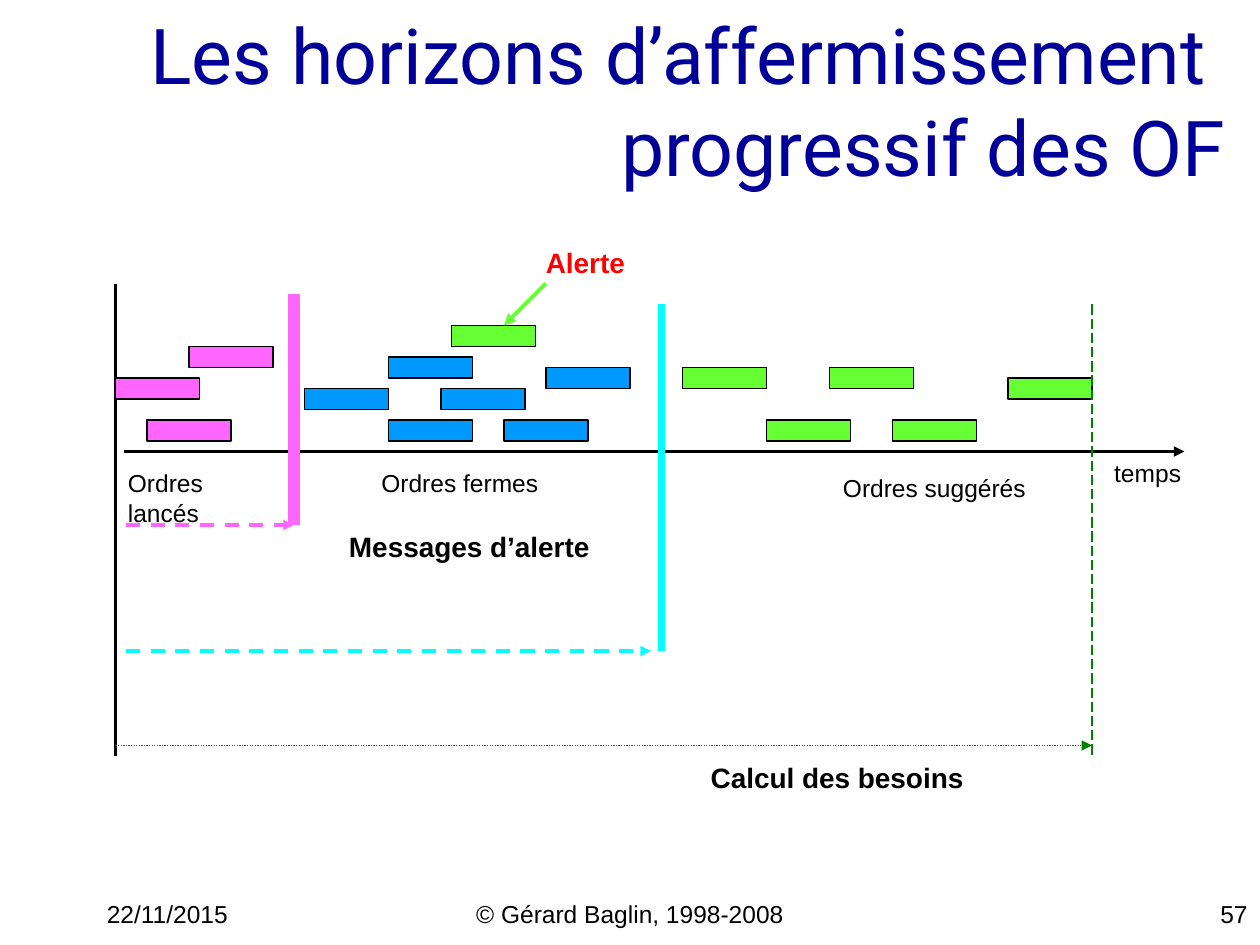
from lxml.etree import SubElement
from pptx import Presentation
from pptx.dml.color import RGBColor
from pptx.enum.dml import MSO_LINE
from pptx.enum.shapes import MSO_CONNECTOR, MSO_SHAPE
from pptx.enum.text import MSO_ANCHOR, MSO_AUTO_SIZE, PP_ALIGN
from pptx.oxml.ns import qn
from pptx.util import Inches, Pt

BLACK, NAVY, RED = "000000", "000099", "FF0000"
PINK, BLUE, CYAN = "FF66FF", "0099FF", "00FFFF"
LIME, GREEN = "66FF33", "008000"
LEFT, CENTER, RIGHT = PP_ALIGN.LEFT, PP_ALIGN.CENTER, PP_ALIGN.RIGHT


def color(value):
    return RGBColor.from_string(value)


def grid(*cells):
    return [Inches(cell / 12) for cell in cells]


class HorizonSlide:
    body_font = "Arial"
    title_font = "Roboto"
    order_size = (8, 2)

    def __init__(self, presentation):
        self.slide = presentation.slides.add_slide(presentation.slide_layouts[5])

    def style(self, paragraph, name, size, value, align, bold=False):
        paragraph.alignment = align
        font = paragraph.font
        font.name, font.size, font.bold = name, Pt(size), bold
        font.color.rgb = color(value)

    def title(self, text, box):
        shape = self.slide.shapes.title
        shape.left, shape.top, shape.width, shape.height = grid(*box)
        frame = shape.text_frame
        frame.text = text
        frame.auto_size = MSO_AUTO_SIZE.NONE
        frame.vertical_anchor = MSO_ANCHOR.MIDDLE
        self.style(frame.paragraphs[0], self.title_font, 44, NAVY, RIGHT)

    def label(self, text, box, align=LEFT, size=14, value=BLACK, bold=False, wrap=True):
        frame = self.slide.shapes.add_textbox(*grid(*box)).text_frame
        frame.word_wrap = wrap
        frame.text = text
        self.style(frame.paragraphs[0], self.body_font, size, value, align, bold)

    def order(self, column, row, fill):
        shape = self.slide.shapes.add_shape(
            MSO_SHAPE.RECTANGLE, *grid(column, row, *self.order_size))
        shape.shadow.inherit = False
        shape.fill.solid()
        shape.fill.fore_color.rgb = color(fill)
        shape.line.color.rgb = color(BLACK)
        shape.line.width = Pt(0.75)

    def line(self, start, end, value, width, dash=None, arrow=False):
        connector = self.slide.shapes.add_connector(
            MSO_CONNECTOR.STRAIGHT, *grid(*start, *end))
        connector.line.color.rgb = color(value)
        connector.line.width = Pt(width)
        if dash:
            connector.line.dash_style = dash
        if arrow:
            SubElement(connector.line._get_or_add_ln(), qn("a:tailEnd"), type="triangle")
        SubElement(connector._element.spPr, qn("a:effectLst"))


def main():
    presentation = Presentation()
    presentation.slide_width, presentation.slide_height = grid(120, 90)
    page = HorizonSlide(presentation)

    page.title("Les horizons d’affermissement \vprogressif des OF", (1, 2, 117, 15))

    page.label("22/11/2015", (9, 85, 25, 3))
    page.label("© Gérard Baglin, 1998-2008", (41, 85, 38, 3), CENTER)
    page.label("57", (95, 85, 25, 3), RIGHT)

    page.label("Messages d’alerte", (30.8, 49.8, 27.8, 4.4), CENTER, 16, bold=True)
    page.label("Ordres fermes", (29.9, 44, 27.8, 4), CENTER)
    page.label("Ordres suggérés", (75.1, 44.5, 27.8, 4), CENTER)
    page.label("temps", (104.9, 43, 8.8, 4), CENTER, wrap=False)

    page.line((11.8, 43), (112.8, 43), BLACK, 2, arrow=True)
    page.line((63, 29), (63, 62), CYAN, 4.5)
    page.line((28, 28), (28, 50), PINK, 6.75)
    page.label("Ordres lancés", (11, 44, 16.5, 4))
    page.line((12, 62), (62, 62), CYAN, 2, MSO_LINE.DASH, arrow=True)
    page.line((12, 50), (28, 50), PINK, 2, MSO_LINE.DASH, arrow=True)
    page.line((11, 27), (11, 72), BLACK, 2)

    orders = {
        PINK: [(14, 40), (18, 33), (11, 36)],
        BLUE: [(42, 37), (37, 40), (48, 40), (52, 35), (37, 34), (29, 37)],
        LIME: [(65, 35), (85, 40), (96, 36), (79, 35), (73, 40), (43, 31)],
    }
    for fill, places in orders.items():
        for column, row in places:
            page.order(column, row, fill)

    page.line((104, 29), (104, 72), GREEN, 0.75, MSO_LINE.LONG_DASH)
    page.line((11, 71), (104, 71), GREEN, 0.75, MSO_LINE.ROUND_DOT, arrow=True)
    page.label("Calcul des besoins", (66.5, 71.8, 26.5, 4.4), size=16, bold=True, wrap=False)
    page.label("Alerte", (50.8, 22.8, 10, 4.4), size=16, value=RED, bold=True, wrap=False)
    page.line((52, 27), (48, 31), LIME, 2.25, arrow=True)

    presentation.save("out.pptx")


if __name__ == "__main__":
    main()
